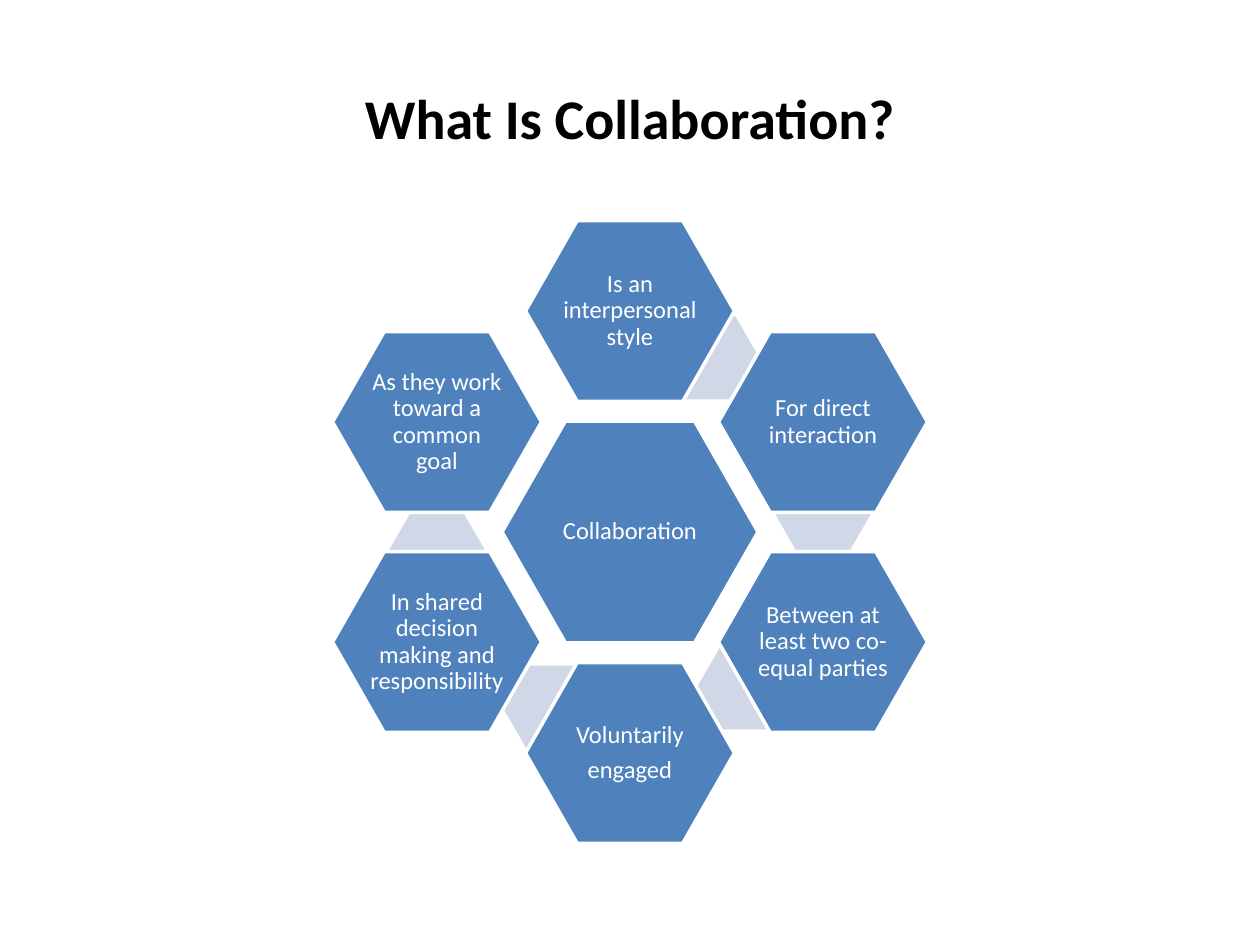
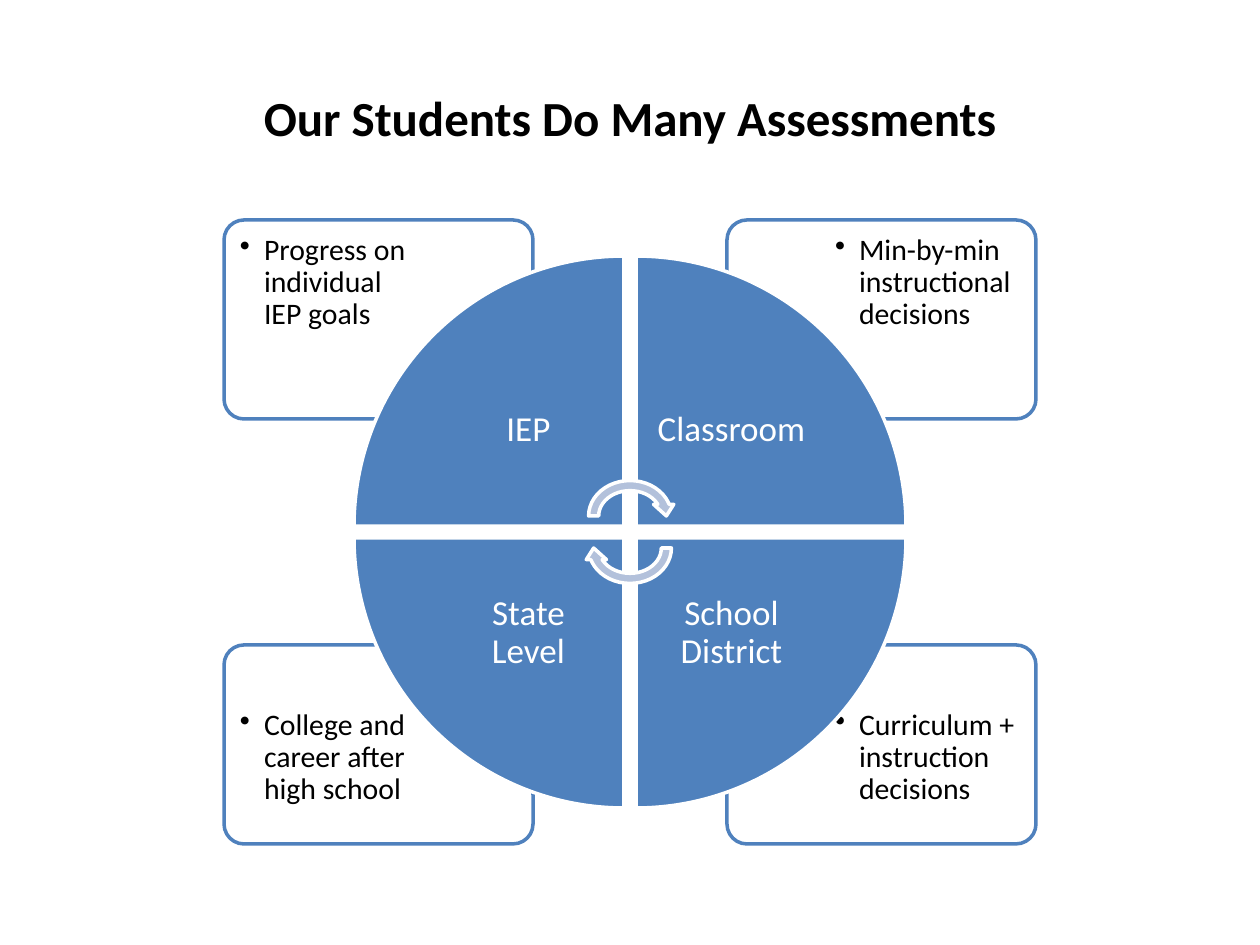
"""Build two slides: a ring of hexagons and a wheel of four wedges."""
from lxml import etree
from pptx import Presentation
from pptx.dml.color import RGBColor
from pptx.enum.shapes import MSO_SHAPE
from pptx.enum.text import MSO_ANCHOR, PP_ALIGN
from pptx.oxml.ns import qn
from pptx.util import Emu, Pt

HEXAGON, WEDGE = MSO_SHAPE.HEXAGON, MSO_SHAPE.PIE_WEDGE
ROUNDED, ARROW = MSO_SHAPE.ROUNDED_RECTANGLE, MSO_SHAPE.CIRCULAR_ARROW
TOP, MIDDLE = MSO_ANCHOR.TOP, MSO_ANCHOR.MIDDLE
LEFT, CENTER = PP_ALIGN.LEFT, PP_ALIGN.CENTER

BLUE = RGBColor(0x4F, 0x81, 0xBD)
PALE = RGBColor(0xD0, 0xD8, 0xE8)
MIST = RGBColor(0xB3, 0xC1, 0xDB)
WHITE = RGBColor(0xFF, 0xFF, 0xFF)
BLACK = RGBColor(0x00, 0x00, 0x00)

SCALE = 914400 / 126
PAGE = (1260, 945)
HEAD = (63, 38, 1134, 158)
BODY = (224, 220, 812, 624)

TITLE = dict(size=32, color=BLACK, bold=True, anchor=MIDDLE, align=CENTER,
             inset=11, line=1.0, after=0)
LABEL = dict(size=14, color=WHITE, bold=False, anchor=MIDDLE, align=CENTER,
             inset=3, line=0.9, after=0.35)
SECTOR = LABEL | dict(size=20, inset=20)
NOTE = LABEL | dict(size=17, color=BLACK, anchor=TOP, align=LEFT, inset=11,
                    after=0.15)

CORE = "Collaboration"
RING = [
    ((0, -221), "Is an interpersonal style"),
    ((193, -110), "For direct interaction"),
    ((193, 110), "Between at least two co-equal parties"),
    ((0, 221), "Voluntarily\nengaged"),
    ((-193, 110), "In shared decision making and responsibility"),
    ((-193, -110), "As they work toward a common goal"),
]
LINKS = [(81, -174), (193, -19), (115, 156), (-79, 175), (-193, 19)]
PARTS = [
    (0, 0, "IEP", "Progress on individual IEP goals"),
    (1, 0, "Classroom", "Min-by-min instructional decisions"),
    (1, 1, "School District", "Curriculum + instruction decisions"),
    (0, 1, "State Level", "College and career after high school"),
]


def px(count):
    """Turn px into EMU."""
    return Emu(round(count * SCALE))


def apply(target, values):
    """Set each attribute named in values."""
    for name, value in values.items():
        setattr(target, name, value)


def middle(box):
    """Return the centre point of a box."""
    left, top, width, height = box
    return left + width // 2, top + height // 2


def around(x, y, width, height):
    """Return the box of a given size centred on a point."""
    return x - width / 2, y - height / 2, width, height


def draw(slide, kind, box, fill, line=None, turn=0, adjust=None):
    """Draw a preset shape with a flat fill."""
    shape = slide.shapes.add_shape(kind, *map(px, box))
    shape.shadow.inherit = False
    shape.rotation = turn
    shape.fill.solid()
    shape.fill.fore_color.rgb = fill
    if line is None:
        shape.line.fill.background()
    else:
        shape.line.color.rgb = line
        shape.line.width = Pt(2)
    if adjust is not None:
        shape.adjustments[0] = adjust


def write(slide, box, text, style, bullet=False):
    """Write text in a box, one paragraph a line."""
    frame = slide.shapes.add_textbox(*map(px, box)).text_frame
    inset = px(style["inset"])
    apply(frame, dict(text=text, word_wrap=True,
                      vertical_anchor=style["anchor"],
                      margin_left=inset, margin_right=inset,
                      margin_top=inset, margin_bottom=inset))
    for para in frame.paragraphs:
        apply(para, dict(alignment=style["align"], line_spacing=style["line"],
                         space_after=Pt(style["size"] * style["after"])))
        for run in para.runs:
            apply(run.font, dict(name="Calibri", size=Pt(style["size"]),
                                 bold=style["bold"]))
            run.font.color.rgb = style["color"]
        if bullet:
            mark(para)


def mark(para):
    """Give a paragraph a round bullet and a hanging indent."""
    props = para._p.get_or_add_pPr()
    props.set("marL", str(px(24)))
    props.set("indent", str(-px(24)))
    etree.SubElement(props, qn("a:buChar")).set("char", "•")


def hexes(slide, box):
    """Place the core hexagon, its ring and the links between them."""
    x, y = middle(box)
    for dx, dy in LINKS:
        draw(slide, HEXAGON, around(x + dx, y + dy, 97, 83), PALE, adjust=0.289)
    cells = [((0, 0), CORE, (256, 222), (171, 147))]
    cells += [(shift, text, (209, 181), (140, 121)) for shift, text in RING]
    for (dx, dy), text, size, room in cells:
        spot = x + dx, y + dy
        draw(slide, HEXAGON, around(*spot, *size), BLUE, WHITE, adjust=0.286)
        write(slide, around(*spot, *room), text, LABEL)


def wheel(slide, box):
    """Place four corner cards, the wedges over them and the arrows."""
    left, top, width, height = box
    x, y = middle(box)
    for col, row, _, text in PARTS:
        card = (left + col * (width - 309), top + row * (height - 199), 309, 199)
        draw(slide, ROUNDED, card, WHITE, BLUE, adjust=0.1)
        room = (left + 5 + col * (width - 217),
                top + 4 + row * (height - 149), 207, 141)
        write(slide, room, text, NOTE, bullet=True)
    for step, (col, row, name, _) in enumerate(PARTS):
        for size in (270, 191):
            part = (x + (6 if col else -6 - size),
                    y + (6 if row else -6 - size), size, size)
            if size == 270:
                draw(slide, WEDGE, part, BLUE, WHITE, turn=90 * step)
            else:
                write(slide, part, name, SECTOR)
    for shift, turn in ((-16, 0), (16, 180)):
        draw(slide, ARROW, around(x, y + shift, 93, 81), MIST, WHITE, turn)


def main():
    """Build and save the slides."""
    deck = Presentation()
    deck.slide_width, deck.slide_height = map(px, PAGE)
    pages = [("What Is Collaboration?", 32, hexes),
             ("Our Students Do Many Assessments", 28, wheel)]
    for title, size, fill in pages:
        slide = deck.slides.add_slide(deck.slide_layouts[6])
        write(slide, HEAD, title, TITLE | dict(size=size))
        fill(slide, BODY)
    deck.save("out.pptx")


if __name__ == "__main__":
    main()
